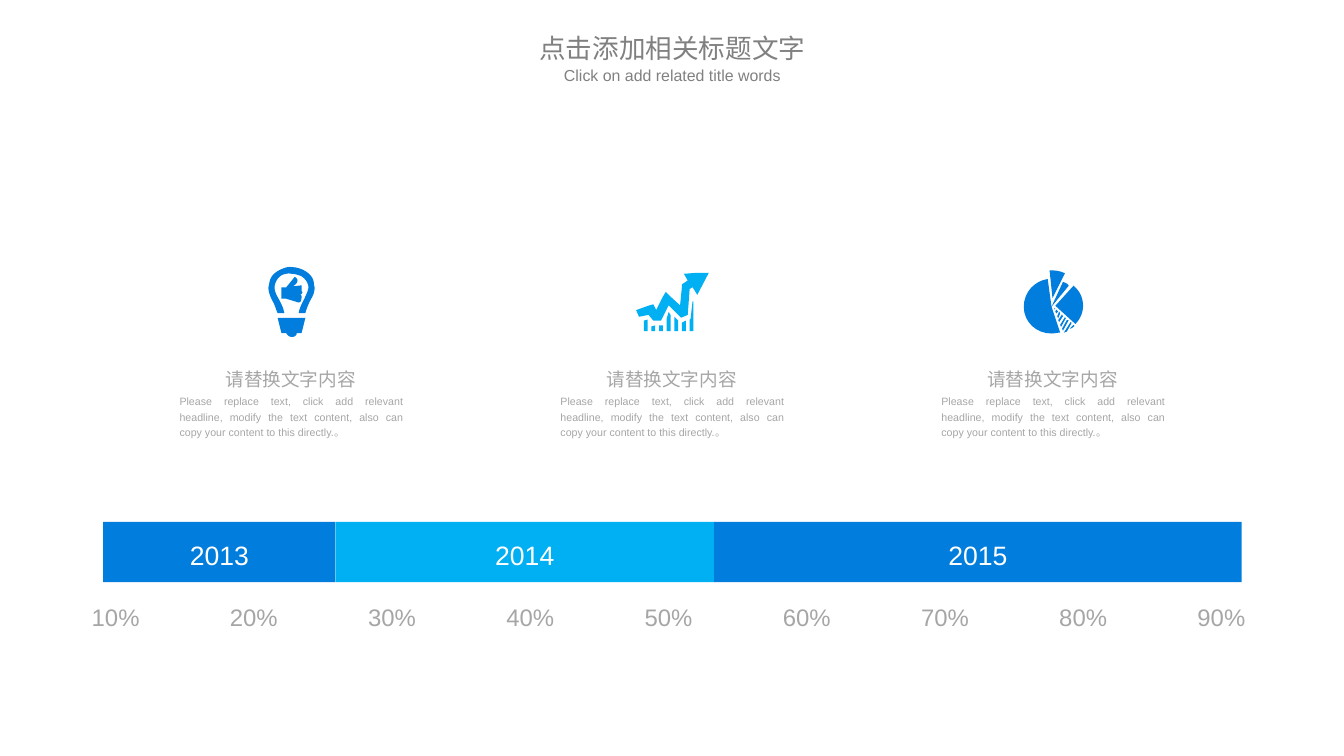
from dataclasses import dataclass

from lxml.etree import SubElement
from pptx import Presentation
from pptx.dml.color import RGBColor
from pptx.enum.shapes import MSO_SHAPE as Preset
from pptx.enum.text import MSO_ANCHOR as Anchor, MSO_AUTO_SIZE as AutoSize, PP_ALIGN as Align
from pptx.oxml.ns import qn
from pptx.util import Inches, Pt


@dataclass(frozen=True)
class Theme:
    blue: str = "007DDD"
    sky: str = "00B0F2"
    white: str = "FFFFFF"
    title: str = "808080"
    muted: str = "A6A6A6"
    latin: str = "Arial"
    chinese: str = "Noto Sans CJK SC"
    title_size: int = 20
    subtitle_size: int = 12
    heading_size: int = 14
    body_size: int = 8
    year_size: int = 20
    tick_size: int = 18
    line_spacing: float = 1.2


@dataclass(frozen=True)
class Box:
    left: float
    top: float
    width: float
    height: float

    def portion(self, left, top, width, height):
        return Box(self.left + self.width * left / 100, self.top + self.height * top / 100,
                   self.width * width / 100, self.height * height / 100)

    def split(self, weights):
        share, start = 100 / sum(weights), 0
        for weight in weights:
            yield self.portion(start * share, 0, weight * share, 100)
            start += weight

    def emu(self):
        return [Inches(length) for length in (self.left, self.top, self.width, self.height)]


THEME = Theme()
PAGE = Box(0, 0, 14.06, 7.91)
HEADING = "请替换文字内容"
BODY = ("Please replace text, click add relevant headline, modify the text content, "
        "also can copy your content to this directly.。")
YEARS = [("2013", 2.43, THEME.blue), ("2014", 3.96, THEME.sky), ("2015", 5.52, THEME.blue)]
TICKS = [f"{percent}%" for percent in range(10, 100, 10)]
STEPS = 8

BULB = [
    [(11, 54), (40, 54), (36, 70), (31, 70), (31, 72, 29, 74, 26, 74),
     (23, 74, 21, 72, 20, 70), (15, 70)],
    [(36, 20), (36, 26), (37, 27), (36, 29), (35, 29), (36, 31), (36, 33), (35, 34),
     (36, 34), (35, 37), (33, 38), (20, 34), (15, 34), (15, 22), (20, 22), (29, 11),
     (35, 15, 30, 19, 27, 21)],
    [(11, 49), (18, 49), (17, 43, 14, 38, 12, 34), (9, 29, 7, 24, 8, 20),
     (9, 15, 12, 11, 16, 9), (19, 8, 22, 7, 26, 8), (29, 8, 32, 9, 35, 10),
     (39, 12, 42, 16, 43, 20), (44, 24, 41, 29, 39, 34), (37, 38, 34, 43, 33, 49),
     (40, 49), (41, 45, 43, 40, 45, 36), (48, 31, 51, 25, 49, 19),
     (49, 12, 44, 7, 38, 4), (34, 2, 30, 1, 26, 1), (22, 0, 17, 2, 13, 4),
     (7, 7, 3, 11, 2, 19), (0, 25, 3, 31, 6, 37), (8, 40, 9, 45, 11, 49)],
]
GROWTH = [
    [(76, 0), (64, 23), (59, 15), (56, 17), (54, 44), (47, 47), (34, 34), (26, 50),
     (18, 50), (13, 44), (3, 46), (0, 39), (14, 34), (18, 33), (21, 39), (28, 25),
     (31, 20), (35, 24), (46, 34), (48, 14), (48, 12), (54, 8), (50, 1), (63, 0)],
    [(8, 61), (12, 61), (12, 49), (8, 50)],
    [(16, 61), (20, 61), (20, 55), (16, 56)],
    [(24, 61), (28, 61), (28, 55), (24, 55)],
    [(32, 61), (36, 61), (36, 44), (34, 41), (32, 48)],
    [(40, 61), (44, 61), (44, 50), (40, 46)],
    [(48, 61), (52, 61), (52, 50), (48, 52)],
    [(56, 61), (60, 61), (60, 30), (59, 30), (57, 48), (56, 49)],
]
PIE = [
    [(52, 16), (58, 21, 62, 28, 62, 37), (62, 44, 59, 51, 54, 56), (33, 37)],
    [(53, 58), (52, 59, 50, 61, 48, 61), (52, 57)],
    [(45, 64), (50, 55), (49, 54), (42, 65)],
    [(41, 63), (47, 52), (45, 52), (40, 61)],
    [(39, 59), (44, 50), (43, 49), (38, 57)],
    [(37, 54), (41, 48), (40, 46), (36, 52)],
    [(36, 50), (38, 45), (37, 43), (35, 48)],
    [(34, 45), (36, 43), (34, 41), (33, 43)],
    [(32, 41), (32, 39), (33, 40)],
    [(41, 12), (29, 38), (25, 9), (11, 11, 0, 23, 0, 38), (0, 54, 13, 66, 29, 66),
     (32, 66, 36, 65, 38, 65), (29, 38), (47, 16), (46, 14, 44, 13, 41, 12)],
    [(30, 0), (27, 0), (30, 29), (43, 3), (39, 1, 34, 0, 30, 0)],
]
FEATURES = [(BULB, THEME.blue), (GROWTH, THEME.sky), (PIE, THEME.blue)]


def write(shape, text, size, color, align, font=THEME.latin):
    para = shape.text_frame.paragraphs[0]
    para.add_run().text = text
    para.alignment = align
    para.font.size = Pt(size)
    para.font.name = font
    para.font.color.rgb = RGBColor.from_string(color)
    return para


def add_text(slide, box, text, size, color, align, wrap=True, font=THEME.latin):
    label = slide.shapes.add_textbox(*box.emu())
    label.text_frame.word_wrap = wrap
    label.text_frame.auto_size = AutoSize.NONE
    para = write(label, text, size, color, align, font)
    para.line_spacing = THEME.line_spacing
    return para


def paint(shape, color):
    shape.shadow.inherit = False
    shape.fill.solid()
    shape.fill.fore_color.rgb = RGBColor.from_string(color)
    shape.line.fill.background()


def flatten(outline):
    points = [outline[0]]
    for segment in outline[1:]:
        if len(segment) == 2:
            points.append(segment)
            continue
        knots = [points[-1], segment[:2], segment[2:4], segment[4:]]
        for step in range(1, STEPS + 1):
            t = step / STEPS
            weights = [(1 - t) ** 3, 3 * t * (1 - t) ** 2, 3 * t * t * (1 - t), t ** 3]
            points.append(tuple(sum(weight * knot[axis] for weight, knot in zip(weights, knots))
                                for axis in (0, 1)))
    return [(100 * x, 100 * y) for x, y in points]


def add_icon(slide, box, outlines, color):
    contours = [flatten(outline) for outline in outlines]
    builder = slide.shapes.build_freeform(*contours[0][0], scale=Inches(1) / 10000)
    for index, points in enumerate(contours):
        if index:
            builder.move_to(*points[0])
        builder.add_line_segments(points[1:], close=True)
    icon = builder.convert_to_shape()
    left, top, width, height = box.emu()
    icon.left = left + (width - icon.width) // 2
    icon.top = top + (height - icon.height) // 2
    paint(icon, color)


def add_title(slide, box):
    rows = [(0, "点击添加相关标题文字", THEME.title_size, THEME.chinese),
            (46.05, "Click on add related title words", THEME.subtitle_size, THEME.latin)]
    for top, text, size, font in rows:
        para = add_text(slide, box.portion(0, top, 100, 53.95), text, size, THEME.title,
                        Align.CENTER, font=font)
        para.line_spacing = 1.0
        para.space_before = Pt(size * 0.2)
        para.space_after = Pt(6)
        SubElement(para.font._element, qn("a:ea"), typeface=THEME.chinese)


def add_feature(slide, box, outlines, color):
    add_icon(slide, box.portion(0, 0, 100, 39.78), outlines, color)
    add_text(slide, box.portion(18.9, 51.61, 62.2, 19.35), HEADING, THEME.heading_size,
             THEME.muted, Align.JUSTIFY, wrap=False)
    add_text(slide, box.portion(0, 68.28, 100, 31.72), BODY, THEME.body_size,
             THEME.muted, Align.JUSTIFY)


def add_timeline(slide, box):
    for (year, _, color), cell in zip(YEARS, box.split([weight for _, weight, _ in YEARS])):
        bar = slide.shapes.add_shape(Preset.RECTANGLE, *cell.emu())
        paint(bar, color)
        bar.text_frame.vertical_anchor = Anchor.MIDDLE
        para = write(bar, year, THEME.year_size, THEME.white, Align.CENTER)
        para.line_spacing = THEME.line_spacing


def add_ticks(slide, box):
    for tick, cell in zip(TICKS, box.split([1] * len(TICKS))):
        add_text(slide, cell.portion(0, 0, 49.1, 100), tick, THEME.tick_size,
                 THEME.muted, Align.JUSTIFY, wrap=False)


def main():
    deck = Presentation()
    deck.slide_width, deck.slide_height = PAGE.emu()[2:]
    slide = deck.slides.add_slide(deck.slide_layouts[6])
    add_ticks(slide, PAGE.portion(6.12, 78.38, 92.56, 5.44))
    add_timeline(slide, PAGE.portion(7.68, 69.03, 84.71, 7.96))
    columns = PAGE.portion(12.66, 35.27, 85.03, 23.51).split([1] * len(FEATURES))
    for (outlines, color), column in zip(FEATURES, columns):
        add_feature(slide, column.portion(0, 0, 63.74, 100), outlines, color)
    add_title(slide, PAGE.portion(38.12, 3.67, 23.83, 9.61))
    deck.save("out.pptx")


if __name__ == "__main__":
    main()
